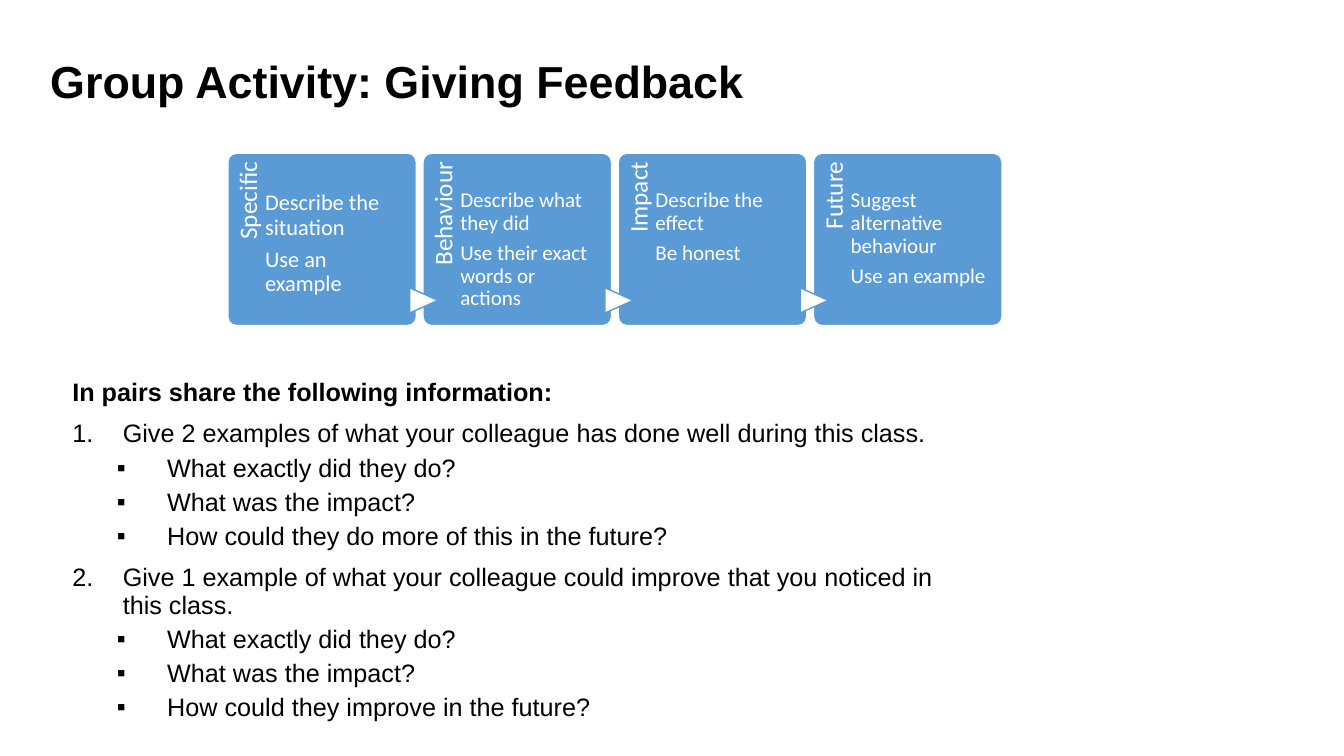
from lxml import etree
from pptx import Presentation
from pptx import util as u
from pptx.dml.color import RGBColor
from pptx.enum import shapes, text
from pptx.oxml.ns import qn

COLUMNS, ROWS = 40, 30
CARD_LEFT, CARD_TOP, CARD_WIDTH, CARD_HEIGHT, CARD_PITCH = 6.78, 6.08, 5.61, 6.84, 5.81
BLUE, WHITE, BLACK = "5B9BD5", "FFFFFF", "000000"

STEPS = [
    ("Specific", 16, ["Describe the situation", "Use an example"]),
    ("Behaviour", 15, ["Describe what they did", "Use their exact words or actions"]),
    ("Impact", 15, ["Describe the effect", "Be honest"]),
    ("Future", 15, ["Suggest alternative behaviour", "Use an example"]),
]
SHARED_QUESTIONS = ["What exactly did they do?", "What was the impact?"]
TASKS = [
    ("Give 2 examples of what your colleague has done well during this class.",
     "How could they do more of this in the future?"),
    ("Give 1 example of what your colleague could improve that you noticed in this class.",
     "How could they improve in the future?"),
]


def colour(value):
    return RGBColor.from_string(value)


class Slide:
    def __init__(self, deck):
        self.page = deck.slides.add_slide(deck.slide_layouts[6])
        self.column = deck.slide_width / COLUMNS
        self.row = deck.slide_height / ROWS

    def place(self, left, top, width, height):
        return [round(size) for size in (left * self.column, top * self.row,
                                         width * self.column, height * self.row)]

    def shape(self, kind, area, fill, line, rotation=0):
        shape = self.page.shapes.add_shape(kind, *self.place(*area))
        shape.shadow.inherit = False
        shape.fill.solid()
        shape.fill.fore_color.rgb = colour(fill)
        shape.line.color.rgb = colour(line)
        shape.line.width = u.Pt(1)
        shape.rotation = rotation
        return shape

    def frame(self, area, insets=(0.1, 0.05, 0.1, 0.05), rotation=0):
        box = self.page.shapes.add_textbox(*self.place(*area))
        box.rotation = rotation
        frame = box.text_frame
        frame.word_wrap = True
        (frame.margin_left, frame.margin_top,
         frame.margin_right, frame.margin_bottom) = map(u.Inches, insets)
        return frame

    def paragraph(self, frame, words, size, font="Arial", ink=BLACK, bold=False,
                  before=0, after=0, level=0, indent=0, bullet=None):
        para = frame.paragraphs[0]
        if para.text:
            para = frame.add_paragraph()
            para.space_before = u.Pt(before)
        para.text = words
        para.level = level
        para.line_spacing = 0.9
        para.space_after = u.Pt(after)
        if bullet:
            properties = para._p.get_or_add_pPr()
            properties.set("marL", str(u.Inches(indent)))
            properties.set("indent", str(u.Inches(-0.5)))
            etree.SubElement(properties, qn("a:buFont"), typeface="Arial")
            if bullet == "number":
                etree.SubElement(properties, qn("a:buAutoNum"), type="arabicPeriod")
            else:
                etree.SubElement(properties, qn("a:buChar"), char=bullet)
        para.font.size = u.Pt(size)
        para.font.name = font
        para.font.bold = bold
        para.font.color.rgb = colour(ink)
        return para

    def card(self, index, name, size, details):
        left = CARD_LEFT + index * CARD_PITCH
        panel = self.shape(shapes.MSO_SHAPE.ROUNDED_RECTANGLE,
                           (left, CARD_TOP, CARD_WIDTH, CARD_HEIGHT), BLUE, WHITE)
        panel.adjustments[0] = 0.05
        label = self.frame((left - 1.53, 8.12, 4.2, 1.48), (0, 0.07, 0.09, 0), 270)
        heading = self.paragraph(label, name, 18, "Calibri", WHITE)
        heading.alignment = text.PP_ALIGN.RIGHT
        if index:
            self.shape(shapes.MSO_SHAPE.FLOWCHART_EXTRACT,
                       (left - 0.35, 11.36, 0.75, 1.12), WHITE, BLUE, 90)
        notes = self.frame((left + 1.11, CARD_TOP, 4.17, CARD_HEIGHT),
                           (0, 0.06 + 0.02 * size, 0, 0))
        for detail in details:
            self.paragraph(notes, detail, size, "Calibri", WHITE, after=0.35 * size)


def main():
    deck = Presentation()
    deck.slide_width, deck.slide_height = u.Inches(13.33), u.Inches(7.5)
    slide = Slide(deck)

    title = slide.frame((1.2, 1.2, 27.51, 4.24))
    title.vertical_anchor = text.MSO_ANCHOR.MIDDLE
    slide.paragraph(title, "Group Activity: Giving Feedback", 32, bold=True)

    for index, step in enumerate(STEPS):
        slide.card(index, *step)

    body = slide.frame((1.86, 14.88, 26.85, 16.96))
    slide.paragraph(body, "In pairs share the following information:", 18, bold=True)
    for task, closing_question in TASKS:
        slide.paragraph(body, task, 18, before=10, indent=0.5, bullet="number")
        for question in SHARED_QUESTIONS + [closing_question]:
            slide.paragraph(body, question, 18, before=5, level=1, indent=0.94, bullet="▪")

    deck.save("out.pptx")


if __name__ == "__main__":
    main()
